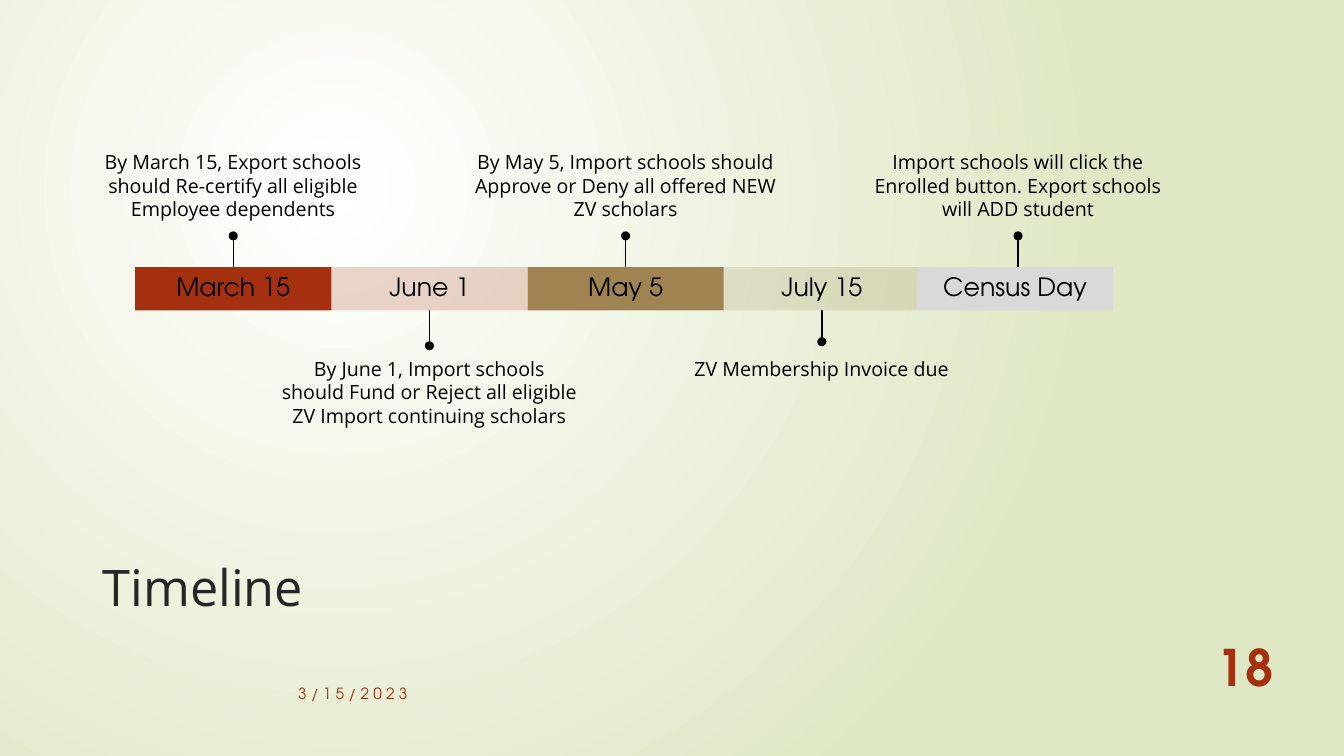
from dataclasses import dataclass
from typing import NamedTuple

from lxml import etree
from pptx import Presentation
from pptx import util as u
from pptx.dml.color import RGBColor
from pptx.enum import shapes, text
from pptx.oxml.ns import qn


@dataclass(frozen=True)
class Theme:
    """Colours, fonts and type sizes of the deck."""
    ink: str = "000000"
    heading: str = "262626"
    rust: str = "A53010"
    bronze: str = "9F8351"
    grey: str = "D9D9D9"
    glow: str = "FFFFFF"
    edge: str = "DFE8C4"
    body_font: str = "Open Sans"
    label_font: str = "TeX Gyre Adventor"
    title_size: int = 36
    label_size: int = 18
    note_size: int = 14
    date_size: int = 11


class Box(NamedTuple):
    """A rectangle in inches."""
    left: float
    top: float
    width: float
    height: float

    def emu(self):
        """Return the four lengths for python-pptx."""
        return [u.Inches(length) for length in self]


class Milestone(NamedTuple):
    """One step of the timeline."""
    label: str
    note: str
    colour: str
    opacity: int = 100
    above: bool = True
    note_width: float = 3.24
    stem: float = 0.31
    shift: float = 0


THEME = Theme()
SLIDE_WIDTH, SLIDE_HEIGHT = 13.33, 7.5
BAR_HEIGHT, NOTE_HEIGHT, NOTE_GAP, DOT = 0.43, 1.51, 0.43, 0.09
MILESTONES = [
    Milestone("March 15", "By March 15, Export schools should Re-certify all eligible "
              "Employee dependents", THEME.rust),
    Milestone("June 1", "By June 1, Import schools should Fund or Reject all eligible "
              "ZV Import continuing scholars", THEME.rust, 20, False, 3.06, 0.35),
    Milestone("May 5", "By May 5, Import schools should Approve or Deny all offered "
              "NEW ZV scholars", THEME.bronze),
    Milestone("July 15", "ZV Membership Invoice due", THEME.bronze, 20, False),
    Milestone("Census Day", "Import schools will click the Enrolled button. Export "
              "schools will ADD student", THEME.grey, shift=-0.03),
]


def write(shape, words, size, font, colour, align=text.PP_ALIGN.CENTER,
          anchor=text.MSO_ANCHOR.MIDDLE, insets=(0.1, 0.05)):
    """Put one styled paragraph into a shape and return it."""
    frame = shape.text_frame
    frame.word_wrap = True
    frame.vertical_anchor = anchor
    frame.margin_left = frame.margin_right = u.Inches(insets[0])
    frame.margin_top = frame.margin_bottom = u.Inches(insets[1])
    para = frame.paragraphs[0]
    para.text, para.alignment = words, align
    para.font.size, para.font.name = u.Pt(size), font
    para.font.color.rgb = RGBColor.from_string(colour)
    return para


def add_solid(page, kind, box, colour, opacity=100):
    """Add a borderless filled shape."""
    shape = page.shapes.add_shape(kind, *box.emu())
    shape.shadow.inherit = False
    shape.line.fill.background()
    shape.fill.solid()
    shape.fill.fore_color.rgb = RGBColor.from_string(colour)
    if opacity < 100:
        tint = shape.element.spPr.find(".//" + qn("a:srgbClr"))
        etree.SubElement(tint, qn("a:alpha"), val=str(opacity * 1000))
    return shape


def add_background(page):
    """Fill the page with a round glow centred in its upper left quarter."""
    fill = page.background.fill
    fill.gradient()
    for stop, place, colour in zip(fill.gradient_stops, (0, 1), (THEME.glow, THEME.edge)):
        stop.position = place
        stop.color.rgb = RGBColor.from_string(colour)
    gradient = page.element.find(".//" + qn("a:gradFill"))
    gradient.remove(gradient.find(qn("a:lin")))
    circle = etree.SubElement(gradient, qn("a:path"), {"path": "circle"})
    etree.SubElement(circle, qn("a:fillToRect"), l="50000", t="50000", r="100000", b="100000")


def add_stem(page, bar, step, centre, start):
    """Add the line and dot leading from a bar towards its note."""
    end = start - step.stem if step.above else start + step.stem
    stem = page.shapes.add_connector(
        shapes.MSO_CONNECTOR.STRAIGHT, u.Inches(centre), u.Inches(start),
        u.Inches(centre), u.Inches(end))
    if not step.shift:
        stem.begin_connect(bar, 0 if step.above else 2)
    stem.line.width = u.Pt(1)
    stem.line.color.rgb = RGBColor.from_string(THEME.ink)
    etree.SubElement(stem.element.spPr, qn("a:effectLst"))
    dot = Box(centre - DOT / 2, end - DOT / 2, DOT, DOT)
    add_solid(page, shapes.MSO_SHAPE.OVAL, dot, THEME.ink)


def add_milestone(page, box, step):
    """Add a bar, its stem and its note within one timeline column."""
    centre = box.left + box.width / 2
    bar_top = box.top + (box.height - BAR_HEIGHT) / 2
    bar = add_solid(page, shapes.MSO_SHAPE.RECTANGLE,
                    Box(box.left + step.shift, bar_top, box.width, BAR_HEIGHT),
                    step.colour, step.opacity)
    label = write(bar, step.label, THEME.label_size, THEME.label_font, THEME.ink,
                  insets=(0.03, 0))
    label.line_spacing = 0.9
    add_stem(page, bar, step, centre, bar_top if step.above else bar_top + BAR_HEIGHT)
    note_top = box.top if step.above else box.top + box.height - NOTE_HEIGHT
    note = page.shapes.add_textbox(
        *Box(centre - step.note_width / 2, note_top, step.note_width, NOTE_HEIGHT).emu())
    write(note, step.note, THEME.note_size, THEME.body_font, THEME.ink,
          anchor=text.MSO_ANCHOR.BOTTOM if step.above else text.MSO_ANCHOR.TOP,
          insets=(0.06, 0.03))


def add_timeline(page, box):
    """Divide the box into equal columns, one for each milestone."""
    column = box.width / len(MILESTONES)
    for index, step in enumerate(MILESTONES):
        add_milestone(page, Box(box.left + index * column, box.top, column, box.height), step)


def add_title(page, box):
    """Add the slide title."""
    title = page.shapes.add_textbox(*box.emu())
    write(title, "Timeline", THEME.title_size, THEME.body_font, THEME.heading,
          text.PP_ALIGN.LEFT)


def add_footer(page, box):
    """Add the date at the left and the page number at the right of the box."""
    date_box = Box(box.left, box.top + box.height - 0.31, 3.45, 0.31)
    date = page.shapes.add_textbox(*date_box.emu())
    para = write(date, "3/15/2023", THEME.date_size, THEME.label_font, THEME.rust,
                 text.PP_ALIGN.RIGHT)
    para.runs[0].font.size = u.Pt(THEME.date_size)
    para.runs[0].font._element.set("spc", "300")
    number_box = Box(box.left + box.width - 1.04, box.top, 1.04, box.height)
    number = page.shapes.add_textbox(*number_box.emu())
    write(number, "18", THEME.title_size, THEME.label_font, THEME.rust).font.bold = True


def main():
    """Build and save the deck."""
    deck = Presentation()
    deck.slide_width, deck.slide_height = u.Inches(SLIDE_WIDTH), u.Inches(SLIDE_HEIGHT)
    page = deck.slides.add_slide(deck.slide_layouts[6])
    add_background(page)
    add_title(page, Box(0.92, 5.25, 10.31, 1.14))
    add_timeline(page, Box(1.34, 0.71, 9.73, 2 * (NOTE_HEIGHT + NOTE_GAP) + BAR_HEIGHT))
    add_footer(page, Box(0.69, 6.2, 12.18, 0.83))
    deck.save("out.pptx")


if __name__ == "__main__":
    main()
